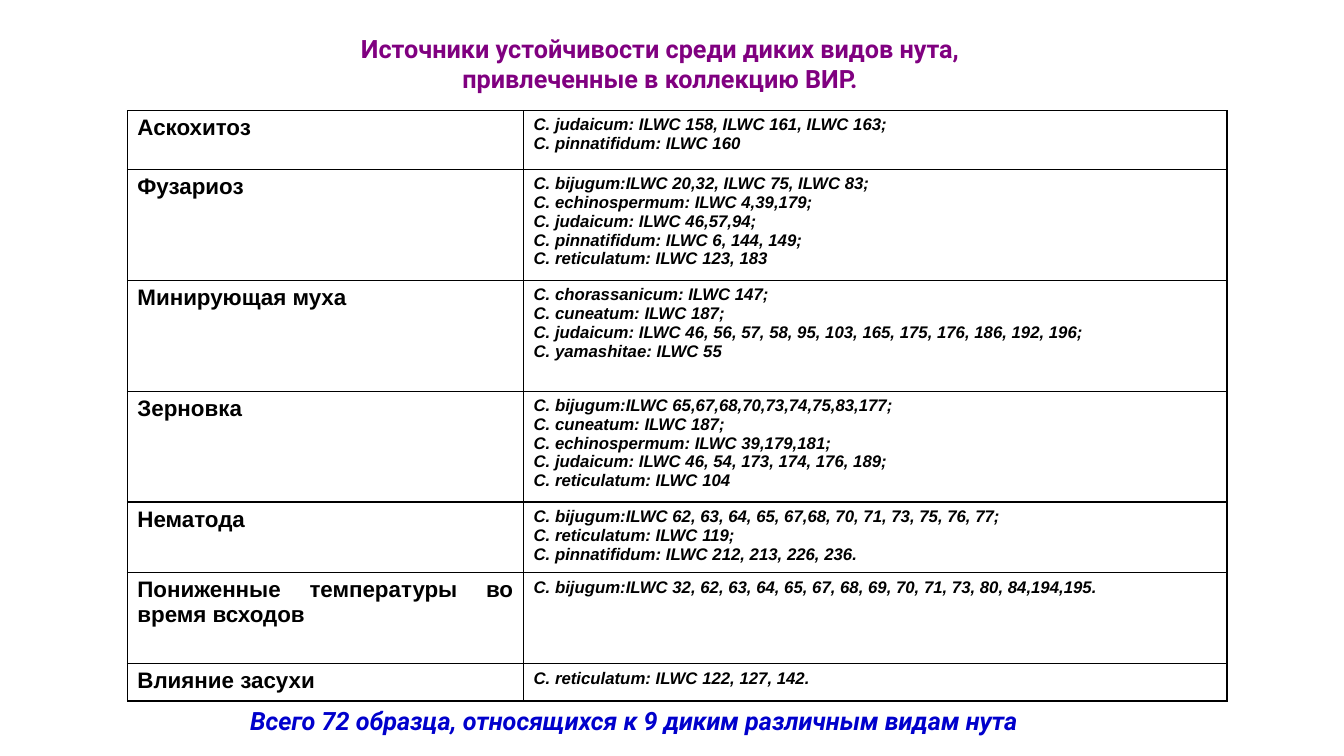
from lxml.etree import SubElement
from pptx import Presentation
from pptx.dml.color import RGBColor
from pptx.enum.text import MSO_ANCHOR, PP_ALIGN
from pptx.oxml.ns import qn
from pptx.util import Pt

PURPLE = RGBColor(0x80, 0x00, 0x80)
BLUE = RGBColor(0x00, 0x00, 0xCC)
BLACK = RGBColor(0x00, 0x00, 0x00)

COLUMN_WIDTHS = (283, 502.5)
RESISTANCE_SOURCES = [
    ("Аскохитоз", 42, [
        "C. judaicum: ILWC 158, ILWC 161, ILWC 163;",
        "C. pinnatifidum: ILWC 160",
    ]),
    ("Фузариоз", 79.2, [
        "C. bijugum:ILWC 20,32, ILWC 75, ILWC 83;",
        "C. echinospermum: ILWC 4,39,179;",
        "C. judaicum: ILWC 46,57,94;",
        "C. pinnatifidum: ILWC 6, 144, 149;",
        "C. reticulatum: ILWC 123, 183",
    ]),
    ("Минирующая муха", 79.2, [
        "C. chorassanicum: ILWC 147;",
        "C. cuneatum: ILWC 187;",
        "C. judaicum: ILWC 46, 56, 57, 58, 95, 103, 165, 175, 176, 186, 192, 196;",
        "C. yamashitae: ILWC 55",
    ]),
    ("Зерновка", 79.2, [
        "C. bijugum:ILWC 65,67,68,70,73,74,75,83,177;",
        "C. cuneatum: ILWC 187;",
        "C. echinospermum: ILWC 39,179,181;",
        "C. judaicum: ILWC 46, 54, 173, 174, 176, 189;",
        "C. reticulatum: ILWC 104",
    ]),
    ("Нематода", 50.4, [
        "C. bijugum:ILWC 62, 63, 64, 65, 67,68, 70, 71, 73, 75, 76, 77;",
        "C. reticulatum: ILWC 119;",
        "C. pinnatifidum: ILWC 212, 213, 226, 236.",
    ]),
    ("Пониженные температуры во время всходов", 65, [
        "C. bijugum:ILWC 32, 62, 63, 64, 65, 67, 68, 69, 70, 71, 73, 80, 84,194,195.",
    ]),
    ("Влияние засухи", 26.6, ["C. reticulatum: ILWC 122, 127, 142."]),
]


def add_run(paragraph, text, font_name, size, color, italic=False):
    """Append one bold run to a paragraph."""
    run = paragraph.add_run()
    run.text = text
    run.font.name = font_name
    run.font.size = Pt(size)
    run.font.bold = True
    run.font.italic = italic
    run.font.color.rgb = color


def add_caption(slide, left, top, width, height, text, color, align, italic=False):
    """Add a one-paragraph Roboto caption."""
    caption = slide.shapes.add_textbox(Pt(left), Pt(top), Pt(width), Pt(height))
    caption.text_frame.word_wrap = True
    paragraph = caption.text_frame.paragraphs[0]
    paragraph.alignment = align
    add_run(paragraph, text, "Roboto", 18, color, italic)


def add_borders(cell):
    """Draw a thin black line on every side of a cell."""
    properties = cell._tc.get_or_add_tcPr()
    for position, side in enumerate(("a:lnL", "a:lnR", "a:lnT", "a:lnB")):
        line = SubElement(properties, qn(side), w=str(Pt(1)))
        fill = SubElement(line, qn("a:solidFill"))
        SubElement(fill, qn("a:srgbClr"), val=str(BLACK))
        properties.insert(position, line)


def fill_cell(cell, lines, size, italic=False):
    """Write justified lines into a bordered, unfilled cell."""
    cell.fill.background()
    add_borders(cell)
    cell.vertical_anchor = MSO_ANCHOR.TOP
    cell.margin_left = cell.margin_right = Pt(7.2)
    cell.margin_top = cell.margin_bottom = Pt(3.6)
    frame = cell.text_frame
    for index, text in enumerate(lines):
        paragraph = frame.add_paragraph() if index else frame.paragraphs[0]
        paragraph.alignment = PP_ALIGN.JUSTIFY
        add_run(paragraph, text, "Arial", size, BLACK, italic)


def add_sources_table(slide, left, top):
    """Add the table of threats and resistant accessions."""
    total_height = sum(height for _, height, _ in RESISTANCE_SOURCES)
    table = slide.shapes.add_table(
        len(RESISTANCE_SOURCES), len(COLUMN_WIDTHS),
        Pt(left), Pt(top), Pt(sum(COLUMN_WIDTHS)), Pt(total_height),
    ).table
    table.first_row = False
    table.horz_banding = False
    for column, width in zip(table.columns, COLUMN_WIDTHS):
        column.width = Pt(width)
    for row, (threat, height, accessions) in zip(table.rows, RESISTANCE_SOURCES):
        row.height = Pt(height)
        fill_cell(row.cells[0], [threat], 16)
        fill_cell(row.cells[1], accessions, 12, italic=True)


def main():
    """Build the slide and save it."""
    presentation = Presentation()
    presentation.slide_width = Pt(960)
    presentation.slide_height = Pt(540)
    slide = presentation.slides.add_slide(presentation.slide_layouts[6])
    add_caption(slide, 171.5, 500.5, 669, 29,
                "Всего 72 образца, относящихся к 9 диким различным видам нута",
                BLUE, PP_ALIGN.LEFT, italic=True)
    add_caption(slide, 208, 20, 527, 51,
                "Источники устойчивости среди диких видов нута, "
                "привлеченные в коллекцию ВИР.",
                PURPLE, PP_ALIGN.CENTER)
    add_sources_table(slide, 91, 79)
    presentation.save("out.pptx")


if __name__ == "__main__":
    main()
